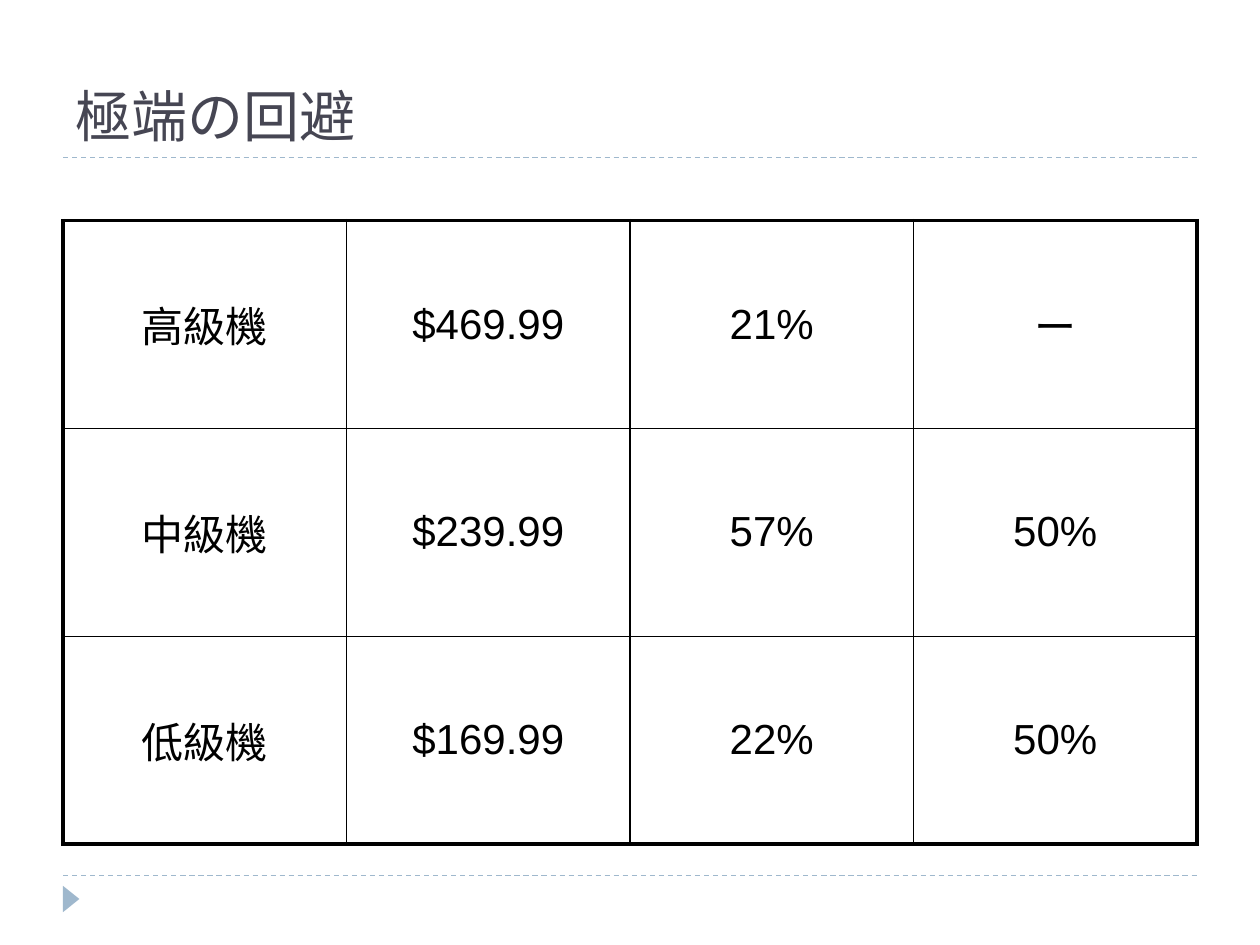
from lxml.etree import SubElement
from pptx import Presentation
from pptx.dml.color import RGBColor
from pptx.enum.dml import MSO_LINE
from pptx.enum.shapes import MSO_CONNECTOR, MSO_SHAPE
from pptx.enum.text import MSO_ANCHOR, PP_ALIGN
from pptx.oxml.ns import qn
from pptx.util import Pt

TITLE = "極端の回避"
ROWS = [
    ("高級機", "$469.99", "21%", "ー"),
    ("中級機", "$239.99", "57%", "50%"),
    ("低級機", "$169.99", "22%", "50%"),
]
COLORS = {"title": "464653", "accent": "9FB8CD", "ink": "000000"}
LEFT, WIDTH = 36, 648
TABLE_TOP, TABLE_HEIGHT = 126, 356.4
RULES = (500.4, 90)
OUTER, INNER = 2.25, 1


def color(name):
    return RGBColor.from_string(COLORS[name])


def style_text(paragraph, font_name, size, color_name, alignment):
    paragraph.alignment = alignment
    paragraph.font.name = font_name
    paragraph.font.size = Pt(size)
    paragraph.font.color.rgb = color(color_name)


def add_rule(page, y):
    rule = page.shapes.add_connector(
        MSO_CONNECTOR.STRAIGHT, Pt(LEFT), Pt(y), Pt(LEFT + WIDTH), Pt(y))
    rule.line.color.rgb = color("accent")
    rule.line.width = Pt(0.75)
    rule.line.dash_style = MSO_LINE.DASH
    SubElement(rule.element.spPr, qn("a:effectLst"))


def add_marker(page):
    marker = page.shapes.add_shape(
        MSO_SHAPE.ISOSCELES_TRIANGLE, Pt(33.1), Pt(509), Pt(15.1), Pt(9.4))
    marker.rotation = 90
    marker.shadow.inherit = False
    marker.fill.solid()
    marker.fill.fore_color.rgb = color("accent")
    marker.line.fill.background()


def set_borders(cell, widths):
    """Draw the cell's edges; widths maps L, R, T and B, in that order, to points."""
    properties = cell._tc.get_or_add_tcPr()
    for side, width in widths.items():
        line = SubElement(properties, qn(f"a:ln{side}"), w=str(Pt(width)))
        fill = SubElement(line, qn("a:solidFill"))
        SubElement(fill, qn("a:srgbClr"), val=COLORS["ink"])


def add_price_table(page):
    row_count, column_count = len(ROWS), len(ROWS[0])
    table = page.shapes.add_table(
        row_count, column_count,
        Pt(LEFT), Pt(TABLE_TOP), Pt(WIDTH), Pt(TABLE_HEIGHT)).table
    table.first_row = table.horz_banding = False
    for r, row in enumerate(ROWS):
        for c, text in enumerate(row):
            cell = table.cell(r, c)
            set_borders(cell, {
                "L": OUTER if c == 0 else INNER,
                "R": OUTER if c == column_count - 1 else INNER,
                "T": OUTER if r == 0 else INNER,
                "B": OUTER if r == row_count - 1 else INNER,
            })
            cell.fill.background()
            cell.vertical_anchor = MSO_ANCHOR.MIDDLE
            cell.text = text
            paragraph = cell.text_frame.paragraphs[0]
            paragraph.space_before = Pt(4.8)
            style_text(paragraph, "Arial", 24, "ink", PP_ALIGN.CENTER)


def main():
    deck = Presentation()
    deck.slide_width, deck.slide_height = Pt(720), Pt(540)
    page = deck.slides.add_slide(deck.slide_layouts[5])

    title = page.shapes.title
    title.left, title.top = Pt(LEFT), Pt(21.6)
    title.width, title.height = Pt(WIDTH), Pt(67)
    title.text_frame.text = TITLE
    title.text_frame.vertical_anchor = MSO_ANCHOR.BOTTOM
    style_text(title.text_frame.paragraphs[0], "Roboto Slab", 32, "title", PP_ALIGN.LEFT)

    for y in RULES:
        add_rule(page, y)
    add_marker(page)
    add_price_table(page)
    deck.save("out.pptx")


if __name__ == "__main__":
    main()
